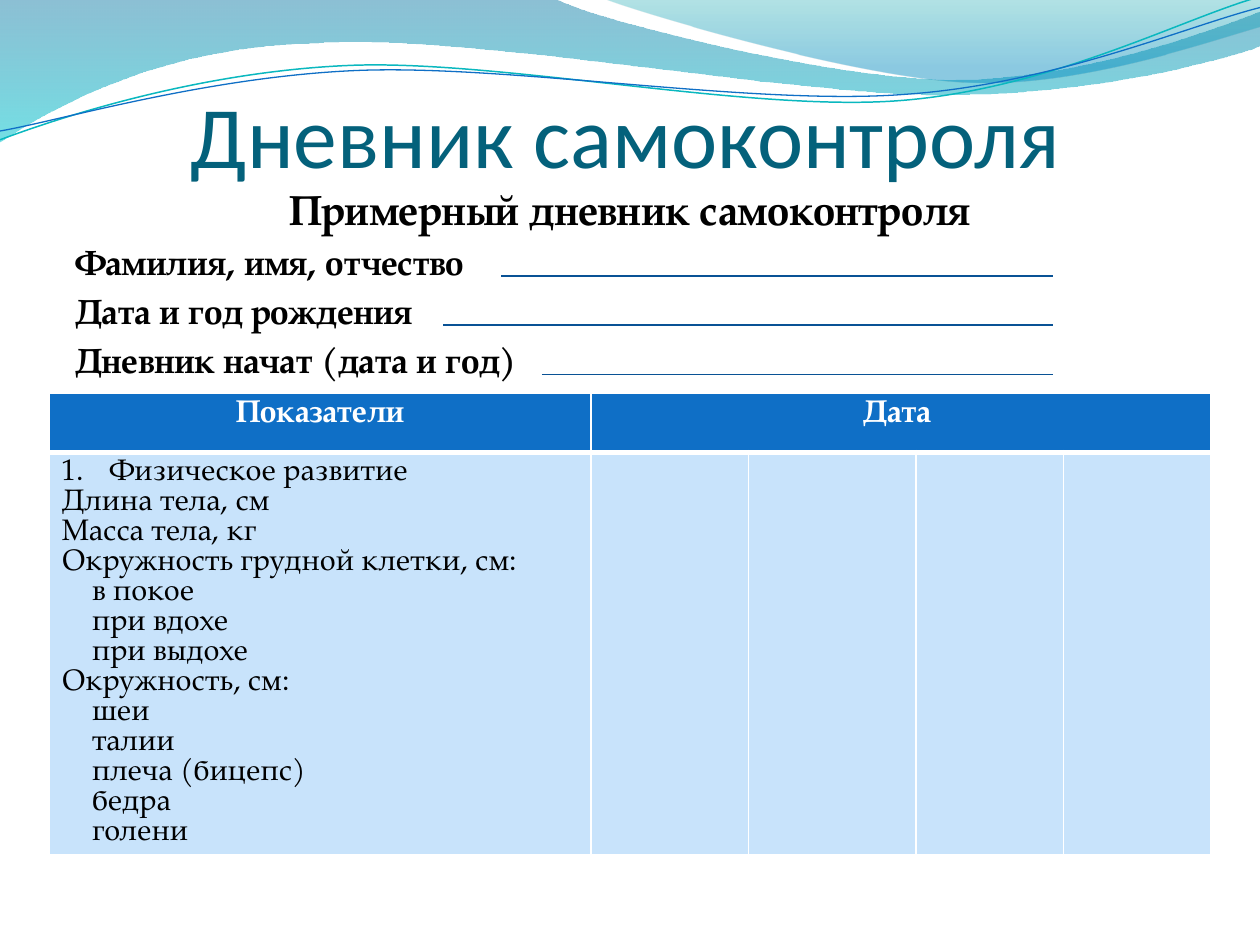
from dataclasses import dataclass

from lxml.etree import SubElement
from pptx import Presentation
from pptx.dml.color import RGBColor
from pptx.enum.shapes import MSO_CONNECTOR
from pptx.enum.text import MSO_ANCHOR, MSO_AUTO_SIZE, PP_ALIGN
from pptx.oxml.ns import qn
from pptx.util import Inches, Pt


@dataclass(frozen=True)
class Theme:
    """Colours, fonts and type sizes of the slide."""
    title: str = "04617B"
    ink: str = "000000"
    white: str = "FFFFFF"
    header: str = "0F6FC6"
    row: str = "C8E3FB"
    rule: str = "095295"
    teal: str = "0AB8BF"
    heading_font: str = "Calibri"
    text_font: str = "TeX Gyre Pagella"
    title_size: int = 50
    subtitle_size: int = 24
    field_size: int = 20
    header_size: int = 18
    row_size: int = 17
    header_leading: float = 17.8
    row_leading: float = 17.15


THEME = Theme()

WIDE_WAVE = [(0, 0), (4.4, -0.01),
             (4.76, 0.17, 6.64, 0.63, 7.58, 0.63), (8.53, 0.63, 9.58, 0.26, 10, 0.09),
             (10.01, 0.36), (9.83, 0.44, 8.7, 0.76, 7.46, 0.75),
             (6.22, 0.75, 3.82, 0.28, 2.57, 0.34), (1.29, 0.36, 0.46, 0.83, -0.01, 1.13),
             (0, 0)]
RIGHT_WAVE = [(4.79, -0.01), (5.09, 0.11, 6.82, 0.62, 7.69, 0.65),
              (8.56, 0.69, 9.61, 0.32, 10, 0.21), (10, 0), (4.79, -0.01)]
TEAL_CURVE = [(0, 1.11), (0.48, 0.93, 1.58, 0.57, 2.77, 0.52),
              (3.95, 0.47, 5.93, 0.89, 7.13, 0.8), (8.33, 0.71, 9.38, 0.15, 9.98, -0.02)]
BLUE_CURVE = [(0, 1.04), (0.47, 0.96, 1.64, 0.61, 2.83, 0.56),
              (4.03, 0.51, 5.97, 0.84, 7.17, 0.75), (8.36, 0.67, 9.41, 0.21, 10, 0.06)]

FIELDS = [("Фамилия, имя, отчество", 3.48), ("Дата и год рождения", 3.02),
          ("Дневник начат (дата и год)", 3.8)]
HEADERS = ["Показатели", "Дата "]
INDICATORS = [("Физическое развитие", "number"), ("Длина тела, см", "main"),
              ("Масса тела, кг", "main"), ("Окружность грудной клетки, см:", "main"),
              ("в покое", "sub"), ("при вдохе", "sub"), ("при выдохе", "sub"),
              ("Окружность, см:", "main"), ("шеи", "sub"), ("талии", "sub"),
              ("плеча (бицепс)", "sub"), ("бедра", "sub"), ("голени", "sub")]


def add_run(paragraph, text, size, color, font=THEME.text_font, bold=False):
    """Append one formatted run to a paragraph."""
    run = paragraph.add_run()
    run.text = text
    run.font.name, run.font.size, run.font.bold = font, Pt(size), bold
    run.font.color.rgb = RGBColor.from_string(color)


def next_paragraph(frame, index):
    """Return the first paragraph of a frame or append a new one."""
    return frame.add_paragraph() if index else frame.paragraphs[0]


def add_curve(shapes, left, top, curve, closed):
    """Draw lines and cubic curves as one freeform without shadow."""
    points = [(Inches(left + node[-2]), Inches(top + node[-1])) for node in curve]
    builder = shapes.build_freeform(*points[0], scale=1.0)
    builder.add_line_segments(points[1:], close=closed)
    shape = builder.convert_to_shape()
    shape.shadow.inherit = False
    segments = list(shape._element.iter(qn("a:lnTo")))
    for segment, node in zip(segments, curve[1:]):
        if len(node) == 6:
            segment.tag = qn("a:cubicBezTo")
            segment.remove(segment[0])
            for x, y in zip(node[::2], node[1::2]):
                SubElement(segment, qn("a:pt"), x=str(Inches(left + x) - shape.left),
                           y=str(Inches(top + y) - shape.top))
    return shape


def add_waves(slide, left, top):
    """Draw the translucent waves and the two thin curves at the top."""
    waves = [(WIDE_WAVE, [(0, "0074A1", 45), (1, "00C6CF", 55)]),
             (RIGHT_WAVE, [(0, "00A1A9", 30), (0.8, "008BBF", 45)])]
    for curve, stops in waves:
        wave = add_curve(slide.shapes, left, top, curve, True)
        wave.line.fill.background()
        wave.fill.gradient()
        wave.fill.gradient_angle = 270
        for stop, (position, color, _) in zip(wave.fill.gradient_stops, stops):
            stop.position = position
            stop.color.rgb = RGBColor.from_string(color)
        colors = wave.fill._xPr.iter(qn("a:srgbClr"))
        for element, (_, _, opacity) in zip(colors, stops):
            SubElement(element, qn("a:alpha"), val=str(opacity * 1000))
    thin_curves = slide.shapes.add_group_shape()
    for curve, color, width in [(TEAL_CURVE, THEME.teal, 0.85),
                                (BLUE_CURVE, THEME.header, 0.75)]:
        thin_curve = add_curve(thin_curves.shapes, left, top, curve, False)
        thin_curve.fill.background()
        thin_curve.line.color.rgb = RGBColor.from_string(color)
        thin_curve.line.width = Pt(width)


def add_title(slide, left, top, width, height):
    """Place and format the title placeholder."""
    title = slide.shapes.title
    title.left, title.top = Inches(left), Inches(top)
    title.width, title.height = Inches(width), Inches(height)
    frame = title.text_frame
    frame.auto_size = MSO_AUTO_SIZE.NONE
    frame.vertical_anchor = MSO_ANCHOR.BOTTOM
    frame.margin_left = frame.margin_right = frame.margin_bottom = 0
    frame.paragraphs[0].alignment = PP_ALIGN.CENTER
    add_run(frame.paragraphs[0], "Дневник самоконтроля", THEME.title_size,
            THEME.title, THEME.heading_font)


def add_form(slide, left, top, width, height):
    """Write the subtitle and the personal fields with their blank lines."""
    form = slide.shapes.add_textbox(Inches(left), Inches(top), Inches(width), Inches(height))
    form.text_frame.word_wrap = True
    labels = [("Примерный дневник самоконтроля", THEME.subtitle_size, PP_ALIGN.CENTER)]
    labels += [(label, THEME.field_size, PP_ALIGN.LEFT) for label, _ in FIELDS]
    for index, (label, size, alignment) in enumerate(labels):
        paragraph = next_paragraph(form.text_frame, index)
        paragraph.alignment = alignment
        paragraph.space_before = Pt(size * 0.19)
        add_run(paragraph, label, size, THEME.ink, bold=True)
    for index, (_, start) in enumerate(FIELDS):
        y = Inches(top + 0.78 + 0.39 * index)
        blank = slide.shapes.add_connector(MSO_CONNECTOR.STRAIGHT, Inches(left + start), y,
                                           Inches(left + 7.86), y)
        blank.line.color.rgb = RGBColor.from_string(THEME.rule)
        blank.line.width = Pt(0.75)
        SubElement(blank._element.spPr, qn("a:effectLst"))


def format_cell(cell, fill, bottom, top):
    """Fill a cell and give it white borders."""
    properties = cell._tc.get_or_add_tcPr()
    for side, width in [("L", 1), ("R", 1), ("T", top), ("B", bottom)]:
        border = SubElement(properties, qn(f"a:ln{side}"), w=str(Pt(width)))
        SubElement(SubElement(border, qn("a:solidFill")), qn("a:srgbClr"), val=THEME.white)
    cell.fill.solid()
    cell.fill.fore_color.rgb = RGBColor.from_string(fill)


def add_diary(slide, left, top, column_widths, row_heights):
    """Build the table of indicators and dates."""
    diary = slide.shapes.add_table(
        len(row_heights), len(column_widths), Inches(left), Inches(top),
        Inches(sum(column_widths)), Inches(sum(row_heights))).table
    for column, width in zip(diary.columns, column_widths):
        column.width = Inches(width)
    for row, height in zip(diary.rows, row_heights):
        row.height = Inches(height)
    for index in range(len(column_widths)):
        format_cell(diary.cell(0, index), THEME.header, 3, 1)
        format_cell(diary.cell(1, index), THEME.row, 1, 3)
    diary.cell(0, 1).merge(diary.cell(0, len(column_widths) - 1))
    for index, header in enumerate(HEADERS):
        paragraph = diary.cell(0, index).text_frame.paragraphs[0]
        paragraph.alignment = PP_ALIGN.CENTER
        paragraph.line_spacing = Pt(THEME.header_leading)
        add_run(paragraph, header, THEME.header_size, THEME.white, bold=True)
    margins = {"number": (0.38, -0.38), "main": (0, 0), "sub": (0.24, 0)}
    for index, (indicator, level) in enumerate(INDICATORS):
        paragraph = next_paragraph(diary.cell(1, 0).text_frame, index)
        paragraph.line_spacing = Pt(THEME.row_leading)
        add_run(paragraph, indicator, THEME.row_size, THEME.ink)
        properties = paragraph._p.get_or_add_pPr()
        margin, indent = margins[level]
        properties.set("marL", str(Inches(margin)))
        properties.set("indent", str(Inches(indent)))
        if level == "number":
            SubElement(properties, qn("a:buFont"), typeface="+mj-lt")
            SubElement(properties, qn("a:buAutoNum"), type="arabicPeriod")


def main():
    """Build and save the self-control diary slide."""
    presentation = Presentation()
    presentation.slide_width, presentation.slide_height = Inches(10), Inches(7.5)
    slide = presentation.slides.add_slide(presentation.slide_layouts[5])
    add_waves(slide, 0, 0)
    add_title(slide, 0.47, 0.23, 9, 1.25)
    add_form(slide, 0.5, 1.41, 9, 1.65)
    add_diary(slide, 0.39, 3.12, [4.3, 1.25, 1.33, 1.17, 1.17], [0.47, 3.08])
    presentation.save("out.pptx")


if __name__ == "__main__":
    main()
